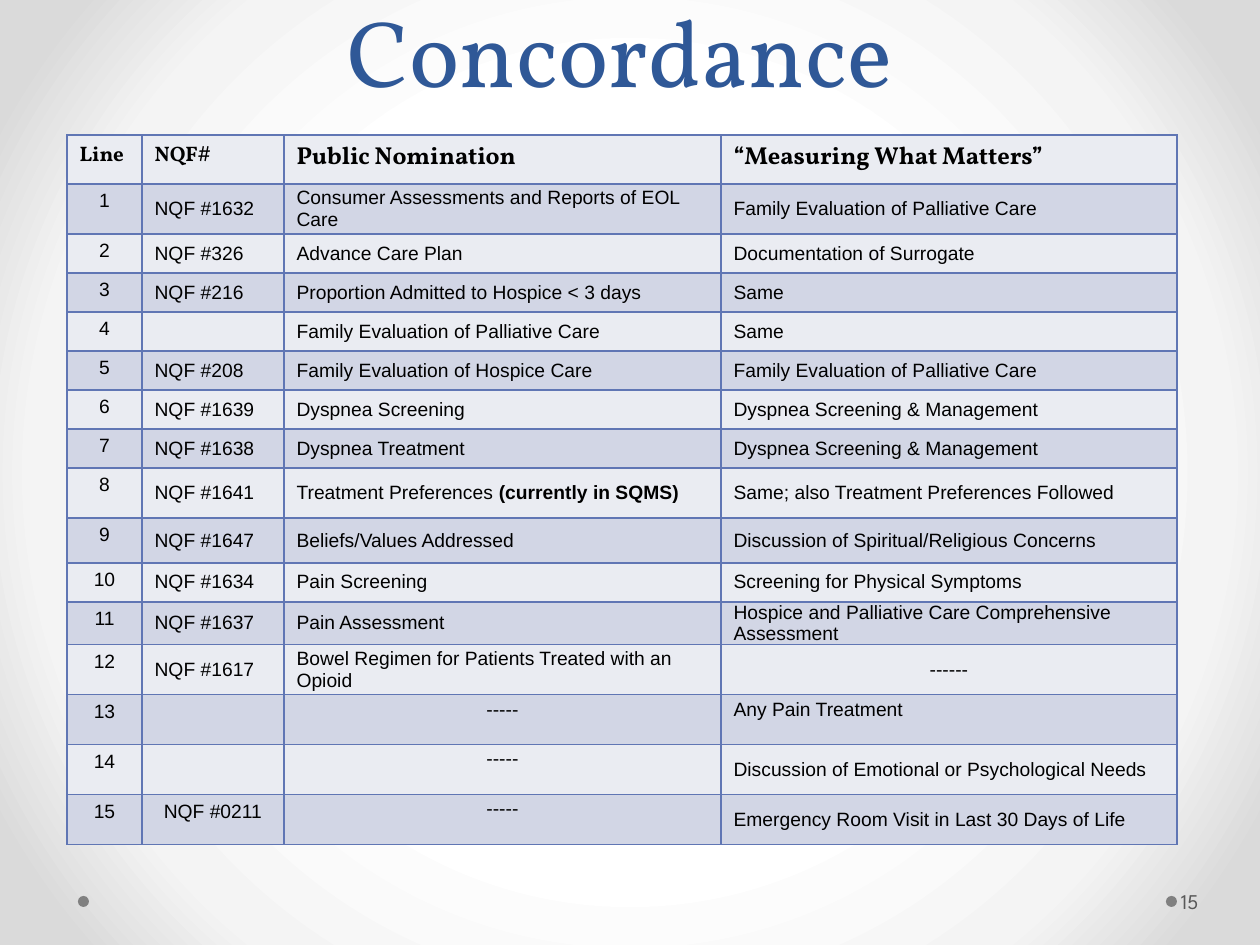
from lxml import etree
from pptx import Presentation
from pptx import util as u
from pptx.dml.color import RGBColor
from pptx.enum import shapes, text
from pptx.oxml import parse_xml
from pptx.oxml.ns import nsdecls, qn

PX = 914400 / 126
INK = "000000"
BORDER = "6076B4"
BANDS = ("EAECF2", "D2D6E5")
COLUMNS = (75, 142, 437, 456)
HEIGHTS = (49, 50, *[39] * 6, 50, 45, 39, 42, *[50] * 4)
BACKGROUND = ((0, "FFFFFF"), (50, "FFFFFF"), (76, "F4F4F4"),
              (92, "DADADA"), (100, "DADADA"))
HEADERS = (("Line", 12), ("NQF#", 12), ("Public Nomination", 14),
           ("“Measuring What Matters”", 14))
MEASURES = (
    ("NQF #1632", "Consumer Assessments and Reports of EOL Care",
     "Family Evaluation of Palliative Care"),
    ("NQF #326", "Advance Care Plan", "Documentation of Surrogate"),
    ("NQF #216", "Proportion Admitted to Hospice < 3 days", "Same"),
    ("", "Family Evaluation of Palliative Care", "Same"),
    ("NQF #208", "Family Evaluation of Hospice Care",
     "Family Evaluation of Palliative Care"),
    ("NQF #1639", "Dyspnea Screening", "Dyspnea Screening & Management"),
    ("NQF #1638", "Dyspnea Treatment", "Dyspnea Screening & Management"),
    ("NQF #1641", "Treatment Preferences |(currently in SQMS)",
     "Same; also Treatment Preferences Followed"),
    ("NQF #1647", "Beliefs/Values Addressed",
     "Discussion of Spiritual/Religious Concerns"),
    ("NQF #1634", "Pain Screening", "Screening for Physical Symptoms"),
    ("NQF #1637", "Pain Assessment",
     "Hospice and Palliative Care Comprehensive Assessment"),
    ("NQF #1617", "Bowel Regimen for Patients Treated with an Opioid", "------"),
    ("", "-----", "Any Pain Treatment"),
    ("", "-----", "Discussion of Emotional or Psychological Needs"),
    ("NQF #0211", "-----", "Emergency Room Visit in Last 30 Days of Life"),
)
HIGH_CELLS = {(13, 2), (13, 3), (14, 2), (15, 2)}
TOP_CELLS = {(15, 1)}


def px(length):
    return u.Emu(round(length * PX))


def color(value):
    return RGBColor.from_string(value)


def place(box, left, top, width, height):
    box.left, box.top = px(left), px(top)
    box.width, box.height = px(width), px(height)


def add_span(para, words, size, font, ink=INK, bold=False):
    span = para.add_run()
    span.text = words
    span.font.size = u.Pt(size)
    span.font.name = font
    span.font.bold = bold
    span.font.color.rgb = color(ink)


def set_background(page):
    stops = "".join(
        f'<a:gs pos="{position * 1000}"><a:srgbClr val="{value}"/></a:gs>'
        for position, value in BACKGROUND)
    page.background.fill.solid()
    properties = page.background._cSld.bg.bgPr
    solid = properties.find(qn("a:solidFill"))
    properties.replace(solid, parse_xml(
        f'<a:gradFill {nsdecls("a")} rotWithShape="1"><a:gsLst>{stops}</a:gsLst>'
        '<a:path path="circle"><a:fillToRect l="50000" t="50000" r="50000" b="50000"/>'
        '</a:path></a:gradFill>'))


def set_title(page):
    title = page.shapes.title
    place(title, 63, 0, 1114, 113)
    frame = title.text_frame
    frame.auto_size = text.MSO_AUTO_SIZE.NONE
    frame.vertical_anchor = text.MSO_ANCHOR.BOTTOM
    para = frame.paragraphs[0]
    para.alignment = text.PP_ALIGN.CENTER
    para.line_spacing = u.Pt(58)
    add_span(para, "Concordance", 54, "Vollkorn", "2F5897")


def add_dot(page, left):
    dot = page.shapes.add_shape(
        shapes.MSO_SHAPE.OVAL, px(left), px(896), px(11), px(11))
    dot.shadow.inherit = False
    dot.fill.solid()
    dot.fill.fore_color.rgb = color("808080")
    dot.line.fill.background()


def add_page_number(page):
    box = page.shapes.add_textbox(px(1177), px(876), px(77), px(50))
    frame = box.text_frame
    frame.word_wrap = True
    frame.vertical_anchor = text.MSO_ANCHOR.MIDDLE
    frame.margin_left = px(4)
    frame.margin_right = px(6)
    add_span(frame.paragraphs[0], "15", 12, "League Spartan", "595959")


def style_cell(cell, band):
    properties = cell._tc.get_or_add_tcPr()
    for side in ("lnL", "lnR", "lnT", "lnB"):
        line = etree.SubElement(properties, qn(f"a:{side}"), w=str(u.Pt(1)))
        fill = etree.SubElement(line, qn("a:solidFill"))
        etree.SubElement(fill, qn("a:srgbClr"), val=BORDER)
    cell.fill.solid()
    cell.fill.fore_color.rgb = color(band)


def fill_body_cell(cell, words, row, column):
    position = (row, column)
    centred = column == 0 or words.startswith("--") or position in TOP_CELLS
    if column > 0 and position not in TOP_CELLS:
        high = position in HIGH_CELLS
        cell.margin_top = px(4 if high else 0)
        cell.margin_bottom = 0
        cell.vertical_anchor = text.MSO_ANCHOR.TOP if high else text.MSO_ANCHOR.MIDDLE
    para = cell.text_frame.paragraphs[0]
    if centred:
        para.alignment = text.PP_ALIGN.CENTER
    if words:
        for index, part in enumerate(words.split("|")):
            add_span(para, part, 11, "Arial", bold=index == 1)


def add_measures(page):
    frame = page.shapes.add_table(
        len(HEIGHTS), len(COLUMNS), px(67), px(135), px(sum(COLUMNS)), px(sum(HEIGHTS)))
    table = frame.table
    for column, width in zip(table.columns, COLUMNS):
        column.width = px(width)
    for row, height in zip(table.rows, HEIGHTS):
        row.height = px(height)
    for column, (words, size) in enumerate(HEADERS):
        cell = table.cell(0, column)
        style_cell(cell, BANDS[0])
        add_span(cell.text_frame.paragraphs[0], words, size, "Vollkorn", bold=True)
    for row, measure in enumerate(MEASURES, 1):
        for column, words in enumerate((str(row), *measure)):
            cell = table.cell(row, column)
            style_cell(cell, BANDS[row % 2])
            fill_body_cell(cell, words, row, column)


def main():
    deck = Presentation()
    deck.slide_width, deck.slide_height = px(1260), px(945)
    page = deck.slides.add_slide(deck.slide_layouts[5])
    set_background(page)
    for left in (1166, 78):
        add_dot(page, left)
    set_title(page)
    add_measures(page)
    add_page_number(page)
    deck.save("out.pptx")


if __name__ == "__main__":
    main()
